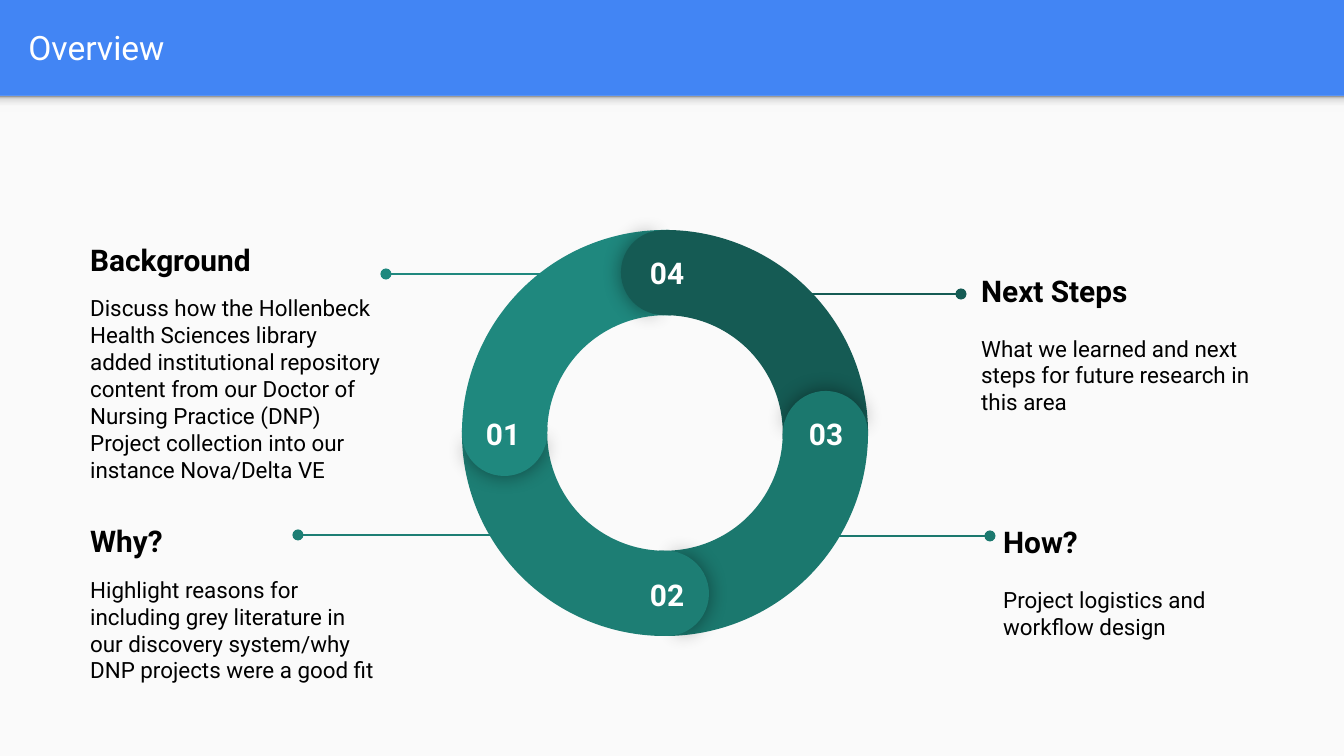
from dataclasses import dataclass

from lxml import etree
from pptx import Presentation
from pptx.dml.color import RGBColor
from pptx.enum.shapes import MSO_CONNECTOR, MSO_SHAPE
from pptx.enum.text import MSO_ANCHOR, PP_ALIGN
from pptx.oxml import parse_xml
from pptx.oxml.ns import nsdecls, qn
from pptx.util import Inches, Pt

RECT, ARC, PIE = MSO_SHAPE.RECTANGLE, MSO_SHAPE.BLOCK_ARC, MSO_SHAPE.PIE
STRAIGHT = MSO_CONNECTOR.STRAIGHT
TOP, MIDDLE = MSO_ANCHOR.TOP, MSO_ANCHOR.MIDDLE
LEFT, CENTER = PP_ALIGN.LEFT, PP_ALIGN.CENTER

FONT = "Roboto"
EMU_PER_PX = 914400 / 134.4
WIDTH, HEIGHT, HEADER_H = 1344, 756, 96
RING_X, RING_Y, RING_D, CAP_D = 462, 230, 406, 85
COLORS = {
    "header": "4285F4", "body": "FAFAFA", "white": "FFFFFF", "black": "000000",
    "01": "1F887E", "02": "1D7E74", "03": "1B786E", "04": "155B54",
}
HEADER_SHADE = [(0, "F9F9F9"), (36, "F9F9F9"), (80, "DEDEDE"), (100, "999999")]


@dataclass
class Segment:
    number: str
    arc_turn: int
    cap: tuple[int, int]
    label: tuple[int, int]


@dataclass
class Topic:
    number: str
    heading: str
    body: str
    box: tuple[int, int, int]
    gap: float
    line: tuple[int, int, int]


SEGMENTS = [
    Segment("02", 240, (624, 551), (630, 563)),
    Segment("01", 330, (462, 391), (466, 402)),
    Segment("04", 60, (621, 230), (630, 241)),
    Segment("03", 150, (783, 391), (789, 402)),
]
TOPICS = [
    Topic("01", "Background",
          "Discuss how the Hollenbeck Health Sciences library added institutional "
          "repository content from our Doctor of Nursing Practice (DNP) Project "
          "collection into our instance Nova/Delta VE",
          (77, 267, 320), 9.4, (540, 386, 274)),
    Topic("02", "Why?",
          "Highlight reasons for including grey literature in our discovery "
          "system/why DNP projects were a good fit",
          (77, 508, 312), 9.4, (491, 298, 535)),
    Topic("04", "Next Steps",
          "What we learned and next steps for future research in this area",
          (968, 249, 312), 14, (771, 961, 294)),
    Topic("03", "How?", "Project logistics and workflow design",
          (990, 487, 312), 14, (801, 990, 536)),
]


def px(n: int) -> int:
    return round(n * EMU_PER_PX)


def rgb(name: str) -> RGBColor:
    return RGBColor.from_string(COLORS[name])


def add_shape(s, kind, x: int, y: int, w: int, h: int, color: str,
              turn: float = 0, adjust: tuple = ()):
    sp = s.shapes.add_shape(kind, px(x), px(y), px(w), px(h))
    sp.shadow.inherit = False
    sp.fill.solid()
    sp.fill.fore_color.rgb = rgb(color)
    sp.line.fill.background()
    sp.rotation = turn
    for i, value in enumerate(adjust):
        sp.adjustments[i] = value
    return sp


def add_glow(sp) -> None:
    effects = sp._element.spPr.find(qn("a:effectLst"))
    shadow = etree.SubElement(effects, qn("a:outerShdw"), blurRad=str(Pt(11.2)),
                              dist="0", dir="0", algn="ctr", rotWithShape="0")
    color = etree.SubElement(shadow, qn("a:srgbClr"), val=COLORS["black"])
    etree.SubElement(color, qn("a:alpha"), val="43000")


def shade(sp) -> None:
    stops = "".join(f'<a:gs pos="{pos * 1000}"><a:srgbClr val="{c}"/></a:gs>'
                    for pos, c in HEADER_SHADE)
    grad = parse_xml(f'<a:gradFill {nsdecls("a")}><a:gsLst>{stops}</a:gsLst>'
                     '<a:lin ang="16200000" scaled="0"/></a:gradFill>')
    solid = sp._element.spPr.find(qn("a:solidFill"))
    solid.getparent().replace(solid, grad)


def format_frame(tf, anchor) -> None:
    tf.word_wrap = True
    tf.vertical_anchor = anchor
    tf.margin_left = tf.margin_right = tf.margin_top = tf.margin_bottom = Inches(0.1)


def add_run(p, text: str, size: int, color: str, bold: bool = False, align=LEFT) -> None:
    p.alignment = align
    r = p.add_run()
    r.text = text
    r.font.name, r.font.size, r.font.bold = FONT, Pt(size), bold
    r.font.color.rgb = rgb(color)


def add_box(s, x: int, y: int, w: int, h: int, anchor):
    tf = s.shapes.add_textbox(px(x), px(y), px(w), px(h)).text_frame
    format_frame(tf, anchor)
    return tf


def add_cap(s, seg: Segment) -> None:
    # A shadowed half overlaps the neighbour, a plain half joins its own arc
    size = (CAP_D, CAP_D, seg.number)
    turn = (seg.arc_turn - 60) % 360
    add_glow(add_shape(s, PIE, *seg.cap, *size, turn + 0.7, (61.9, 149.96)))
    add_shape(s, PIE, *seg.cap, *size, (turn + 180) % 360, (40.28, 171.84))


def add_topic(s, topic: Topic) -> None:
    x, y, w = topic.box
    tf = add_box(s, x, y, w, 190, MIDDLE)
    p = tf.paragraphs[0]
    p.space_after = Pt(topic.gap)
    add_run(p, topic.heading, 16, "black", bold=True)
    p = tf.add_paragraph()
    p.space_after = Pt(16)
    add_run(p, topic.body, 12, "black")

    start, end, level = topic.line
    cxn = s.shapes.add_connector(STRAIGHT, px(start), px(level), px(end), px(level))
    cxn.line.color.rgb = rgb(topic.number)
    cxn.line.width = Pt(0.75)
    etree.SubElement(cxn.line._get_or_add_ln(), qn("a:tailEnd"), type="oval")
    etree.SubElement(cxn._element.spPr, qn("a:effectLst"))


def main() -> None:
    prs = Presentation()
    prs.slide_width, prs.slide_height = px(WIDTH), px(HEIGHT)
    s = prs.slides.add_slide(prs.slide_layouts[5])

    # Header, body and the shade between them
    s.background.fill.solid()
    s.background.fill.fore_color.rgb = rgb("header")
    add_shape(s, RECT, 0, HEADER_H, WIDTH, HEIGHT - HEADER_H, "body")
    shade(add_shape(s, RECT, 0, HEADER_H, WIDTH, 16, "body"))

    title = s.shapes.title
    title.left, title.top, title.width, title.height = px(15), px(3), px(1297), px(89)
    format_frame(title.text_frame, MIDDLE)
    add_run(title.text_frame.paragraphs[0], "Overview", 18, "white")

    # Ring of four arcs, then the rounded caps and numbers
    for seg in SEGMENTS:
        add_shape(s, ARC, RING_X, RING_Y, RING_D, RING_D, seg.number,
                  seg.arc_turn, (126.2, 181.8, 0.21))
    for seg in SEGMENTS:
        add_cap(s, seg)
    for seg in SEGMENTS:
        tf = add_box(s, *seg.label, 74, 39, TOP)
        add_run(tf.paragraphs[0], seg.number, 16, "white", bold=True, align=CENTER)

    # Topics with their leader lines
    for topic in TOPICS:
        add_topic(s, topic)

    prs.save("out.pptx")


if __name__ == "__main__":
    main()
